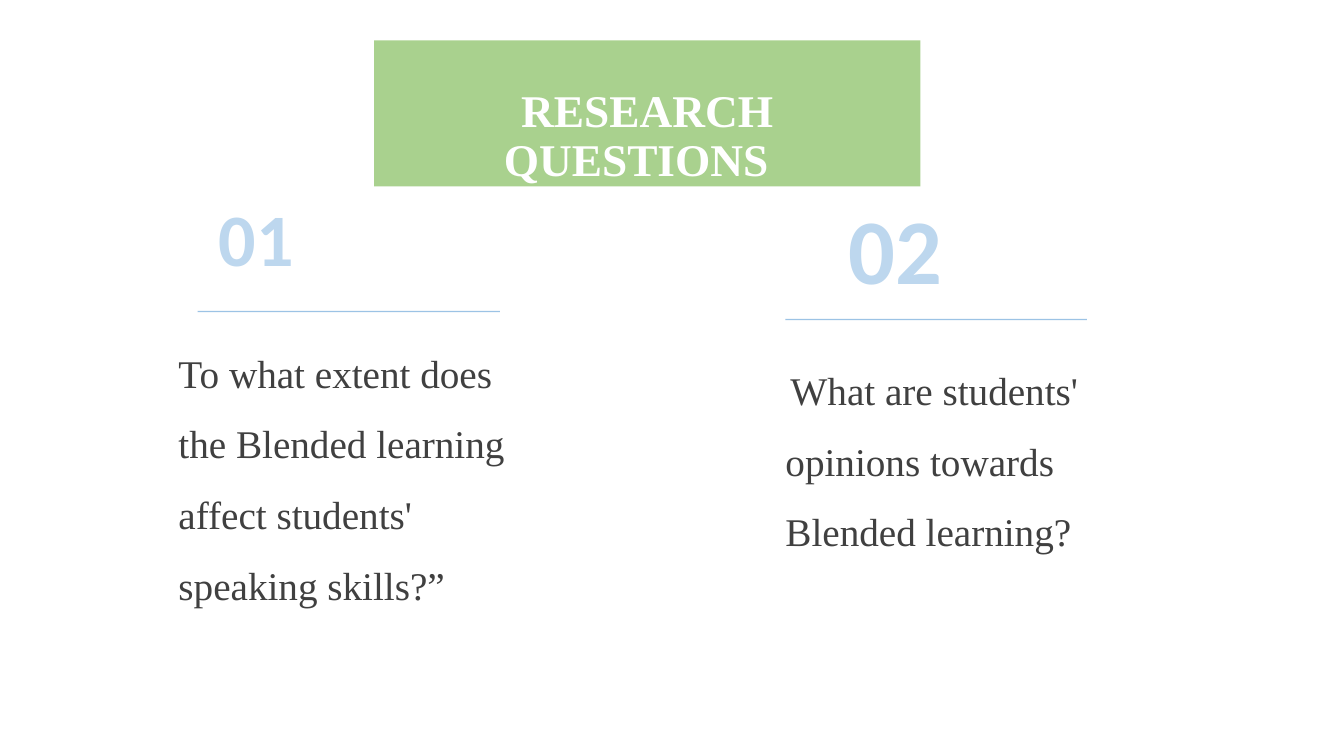
from dataclasses import dataclass

from lxml.etree import SubElement as Sub
from pptx import Presentation
from pptx.dml.color import RGBColor
from pptx.enum.shapes import MSO_CONNECTOR as Conn
from pptx.enum.text import MSO_ANCHOR as Anchor, MSO_AUTO_SIZE as Auto, PP_ALIGN as Align
from pptx.oxml.ns import qn
from pptx.shapes.base import BaseShape
from pptx.slide import Slide
from pptx.util import Emu, Inches, Pt

WIDE, HIGH = Inches(13.33), Inches(7.5)
SERIF, SANS = "Times New Roman", "Calibri"
GREEN, WHITE, PALE, BLUE, DARK = "A9D18E", "FFFFFF", "BDD7EE", "5B9BD5", "404040"


@dataclass
class Box:
    """A frame in percent of the slide's width and height."""
    left: float
    top: float
    width: float
    height: float = 0

    def frame(self) -> tuple[Emu, Emu, Emu, Emu]:
        """Return the frame in slide units."""
        return (Emu(round(WIDE * self.left / 100)), Emu(round(HIGH * self.top / 100)),
                Emu(round(WIDE * self.width / 100)), Emu(round(HIGH * self.height / 100)))


@dataclass
class Item:
    """A numbered question with its rule."""
    label: str
    size: float
    head: Box
    rule: Box
    text: str
    body: Box
    indent: float = 0


ITEMS = [
    Item("01", 52.8, Box(16.28, 24.67, 22.96, 12.53), Box(14.7, 41.2, 22.5),
         "To what extent does the Blended learning affect students' speaking skills?”",
         Box(13.28, 43.07, 25.36, 35.47)),
    Item("02", 66, Box(63.17, 22.67, 21.91, 17.47), Box(58.44, 42.27, 22.43),
         "What are students' opinions towards Blended learning?",
         Box(58.44, 45.33, 22.96, 33.2), indent=0.05),
]


def hue(code: str) -> RGBColor:
    """Turn a hex string into a colour."""
    return RGBColor.from_string(code)


def place(shape: BaseShape, box: Box) -> None:
    """Move and size a shape."""
    shape.left, shape.top, shape.width, shape.height = box.frame()


def write(shape: BaseShape, *lines: str, font: str = SERIF, size: float = 28,
          color: str = DARK, bold: bool = False, align: Align = Align.LEFT,
          anchor: Anchor = Anchor.TOP, space: float = 1, wrap: bool = True,
          right: float = 0, margin: float = 0, indent: float = 0) -> None:
    """Fill a shape with formatted lines; margin and indent shift the first."""
    frame = shape.text_frame
    frame.auto_size, frame.word_wrap, frame.vertical_anchor = Auto.NONE, wrap, anchor
    frame.margin_left = frame.margin_top = frame.margin_bottom = 0
    frame.margin_right = Inches(right)
    frame.text = "\n".join(lines)
    for row, para in enumerate(frame.paragraphs):
        props = para._p.get_or_add_pPr()
        props.set("marL", str(0 if row else Inches(margin)))
        props.set("indent", str(0 if row else Inches(indent)))
        Sub(props, qn("a:buNone"))
        para.alignment, para.line_spacing = align, space
        para.space_before = para.space_after = Pt(0)
        for run in para.runs:
            run.font.name, run.font.size, run.font.bold = font, Pt(size), bold
            run.font.color.rgb = hue(color)


def rule(slide: Slide, box: Box) -> None:
    """Draw a thin translucent rule."""
    left, top, width, _ = box.frame()
    line = slide.shapes.add_connector(Conn.STRAIGHT, left, top, left + width, top)
    line.line.color.rgb, line.line.width = hue(BLUE), Pt(1)
    tint = line._element.spPr.find(".//" + qn("a:srgbClr"))
    Sub(tint, qn("a:alpha"), val="60000")
    Sub(line._element.spPr, qn("a:effectLst"))


def main() -> None:
    """Build the slide and save it."""
    deck = Presentation()
    deck.slide_width, deck.slide_height = WIDE, HIGH
    slide = deck.slides.add_slide(deck.slide_layouts[3])
    title, *bodies = slide.placeholders
    place(title, Box(27.83, 5.33, 40.66, 19.33))
    title.fill.solid()
    title.fill.fore_color.rgb = hue(GREEN)
    write(title, "RESEARCH", "QUESTIONS", size=32.4, color=WHITE, bold=True,
          align=Align.CENTER, anchor=Anchor.BOTTOM, space=0.9, right=0.22, margin=0.22)
    for item, body in zip(ITEMS, bodies):
        head = slide.shapes.add_textbox(*item.head.frame())
        write(head, item.label, font=SANS, size=item.size, color=PALE, bold=True,
              anchor=Anchor.BOTTOM, wrap=False)
        rule(slide, item.rule)
        place(body, item.body)
        write(body, item.text, space=1.5, indent=item.indent)
    deck.save("out.pptx")


if __name__ == "__main__":
    main()
